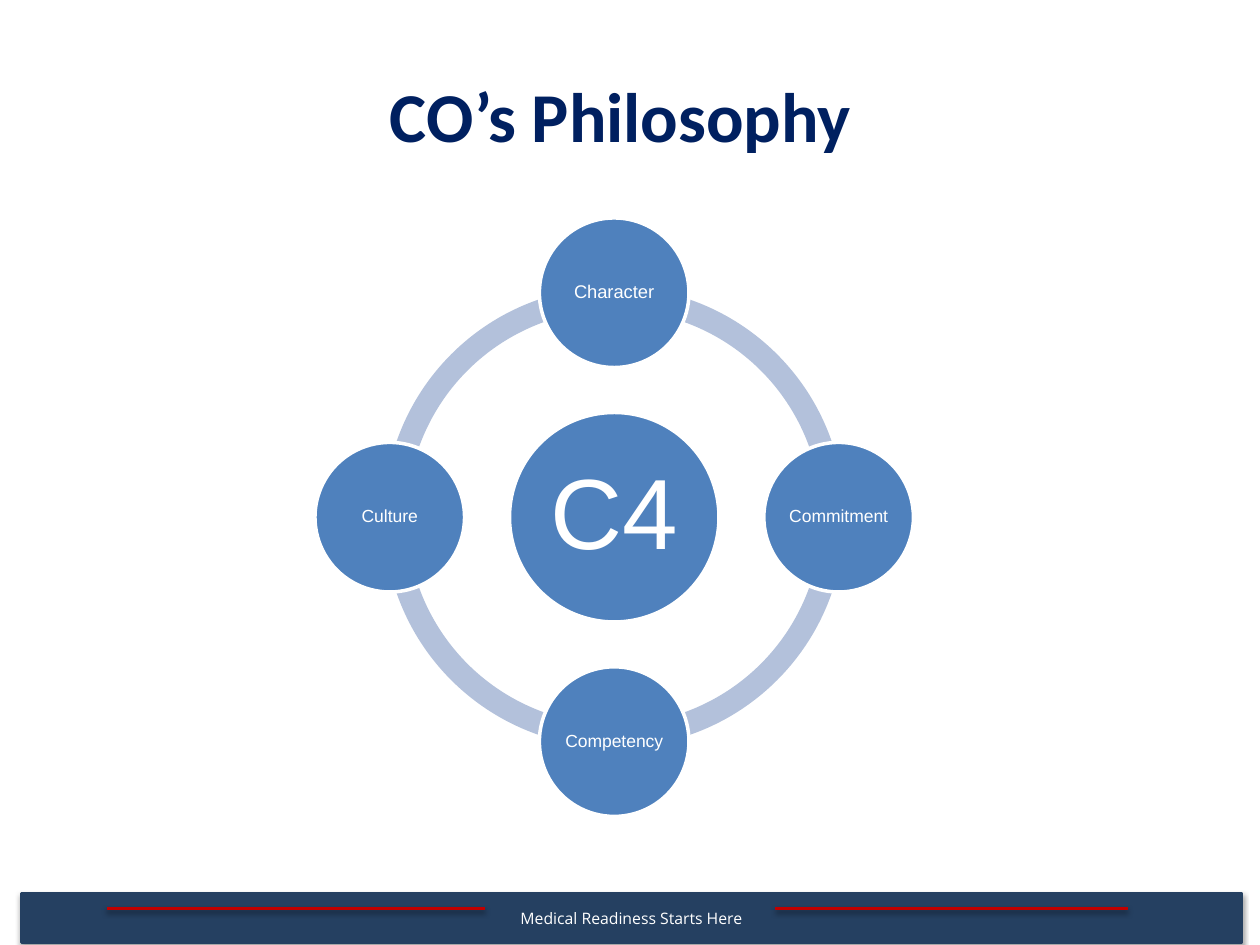
from dataclasses import dataclass
from math import cos, radians, sin

from lxml import etree
from pptx import Presentation
from pptx.dml.color import RGBColor
from pptx.enum.shapes import MSO_CONNECTOR, MSO_SHAPE
from pptx.enum.text import MSO_ANCHOR, PP_ALIGN
from pptx.oxml.ns import qn
from pptx.util import Inches, Pt

RECT, OVAL, ARC = MSO_SHAPE.RECTANGLE, MSO_SHAPE.OVAL, MSO_SHAPE.BLOCK_ARC
STRAIGHT = MSO_CONNECTOR.STRAIGHT
CENTER, MIDDLE, TOP = PP_ALIGN.CENTER, MSO_ANCHOR.MIDDLE, MSO_ANCHOR.TOP


@dataclass(frozen=True)
class Theme:
    navy: str = "002060"
    bar: str = "254061"
    rule: str = "C00000"
    circle: str = "4F81BD"
    ring: str = "B3C1DB"
    white: str = "FFFFFF"
    title_font: str = "Calibri"
    body_font: str = "Arial"
    footer_font: str = "Open Sans"
    title_size: float = 40
    hub_size: float = 57
    first_value_size: float = 10.5
    value_size: float = 10
    footer_size: float = 9
    line_width: float = 2


THEME = Theme()
VALUES = ["Character", "Commitment", "Competency", "Culture"]  # clockwise from the top


def color(value):
    return RGBColor.from_string(value)


def write(shape, text, font, size, ink, inset, anchor=MIDDLE, bold=False, spacing=None):
    frame = shape.text_frame
    frame.word_wrap = True
    frame.vertical_anchor = anchor
    frame.margin_left = frame.margin_right = Inches(inset)
    frame.margin_top = frame.margin_bottom = Inches(inset)
    paragraph = frame.paragraphs[0]
    paragraph.text = text
    paragraph.alignment = CENTER
    paragraph.line_spacing = spacing
    paragraph.font.name = font
    paragraph.font.size = Pt(size)
    paragraph.font.bold = bold
    paragraph.font.color.rgb = color(ink)


def add_filled(slide, kind, box, fill, line=None):
    shape = slide.shapes.add_shape(kind, *map(Inches, box))
    shape.shadow.inherit = False
    shape.fill.solid()
    shape.fill.fore_color.rgb = color(fill)
    if line:
        shape.line.color.rgb = color(line)
        shape.line.width = Pt(THEME.line_width)
    else:
        shape.line.fill.background()
    return shape


def drop_shadow(shape, distance, opacity):
    properties = shape._element.spPr
    effects = properties.find(qn("a:effectLst"))
    if effects is None:
        effects = etree.SubElement(properties, qn("a:effectLst"))
    shadow = etree.SubElement(effects, qn("a:outerShdw"), blurRad=str(Pt(3)),
                              dist=str(Pt(distance)), dir="5400000", rotWithShape="0")
    black = etree.SubElement(shadow, qn("a:srgbClr"), val="000000")
    etree.SubElement(black, qn("a:alpha"), val=str(opacity * 1000))


def add_footer(slide, box):
    left, top, width, height = box
    bar = add_filled(slide, RECT, box, THEME.bar, THEME.bar)
    drop_shadow(bar, 1.8, 35)
    write(bar, "Medical Readiness Starts Here", THEME.footer_font,
          THEME.footer_size, THEME.white, 0.05)

    # Red rules on both sides of the motto, in percent of the bar's width
    y = Inches(top + 0.31 * height)
    for start, end in [(7, 38), (61.8, 90.7)]:
        rule = slide.shapes.add_connector(
            STRAIGHT, Inches(left + width * start / 100), y,
            Inches(left + width * end / 100), y)
        rule.line.color.rgb = color(THEME.rule)
        rule.line.width = Pt(THEME.line_width)
        drop_shadow(rule, 1.6, 38)


def add_title(slide, box):
    title = slide.shapes.add_textbox(*map(Inches, box))
    write(title, "CO’s Philosophy", THEME.title_font, THEME.title_size,
          THEME.navy, 0.05, anchor=TOP, bold=True)


def add_cycle(slide, box):
    left, top, side, _ = box
    center_x, center_y = left + side / 2, top + side / 2

    def around(x, y, diameter):
        return x - diameter / 2, y - diameter / 2, diameter, diameter

    def add_circle(x, y, diameter, text, size, inset):
        circle = add_filled(slide, OVAL, around(x, y, diameter), THEME.circle, THEME.white)
        write(circle, text, THEME.body_font, size, THEME.white, inset, spacing=0.9)

    value_diameter = 0.25 * side
    orbit = (side - value_diameter) / 2

    # Ring: one quarter arc between each pair of values (54 units = 90 degrees)
    ring_box = around(center_x, center_y, 0.77 * side)
    for quarter in range(4):
        arc = add_filled(slide, ARC, ring_box, THEME.ring)
        arc.adjustments[0] = 54 * quarter
        arc.adjustments[1] = 54 * ((quarter + 1) % 4)
        arc.adjustments[2] = 0.05

    # Hub
    add_circle(center_x, center_y, 0.35 * side, "C4", THEME.hub_size, 0.08)

    # Values
    for index, value in enumerate(VALUES):
        angle = radians(360 / len(VALUES) * index - 90)
        size = THEME.value_size if index else THEME.first_value_size
        add_circle(center_x + orbit * cos(angle), center_y + orbit * sin(angle),
                   value_diameter, value, size, 0.01)


def main():
    deck = Presentation()
    deck.slide_width, deck.slide_height = Inches(10), Inches(7.5)
    slide = deck.slides.add_slide(deck.slide_layouts[6])
    add_footer(slide, (0.17, 7.09, 9.68, 0.39))
    add_title(slide, (0.3, 0.53, 9.25, 1.62))
    add_cycle(slide, (2.5, 1.73, 4.75, 4.75))
    deck.save("out.pptx")


if __name__ == "__main__":
    main()
